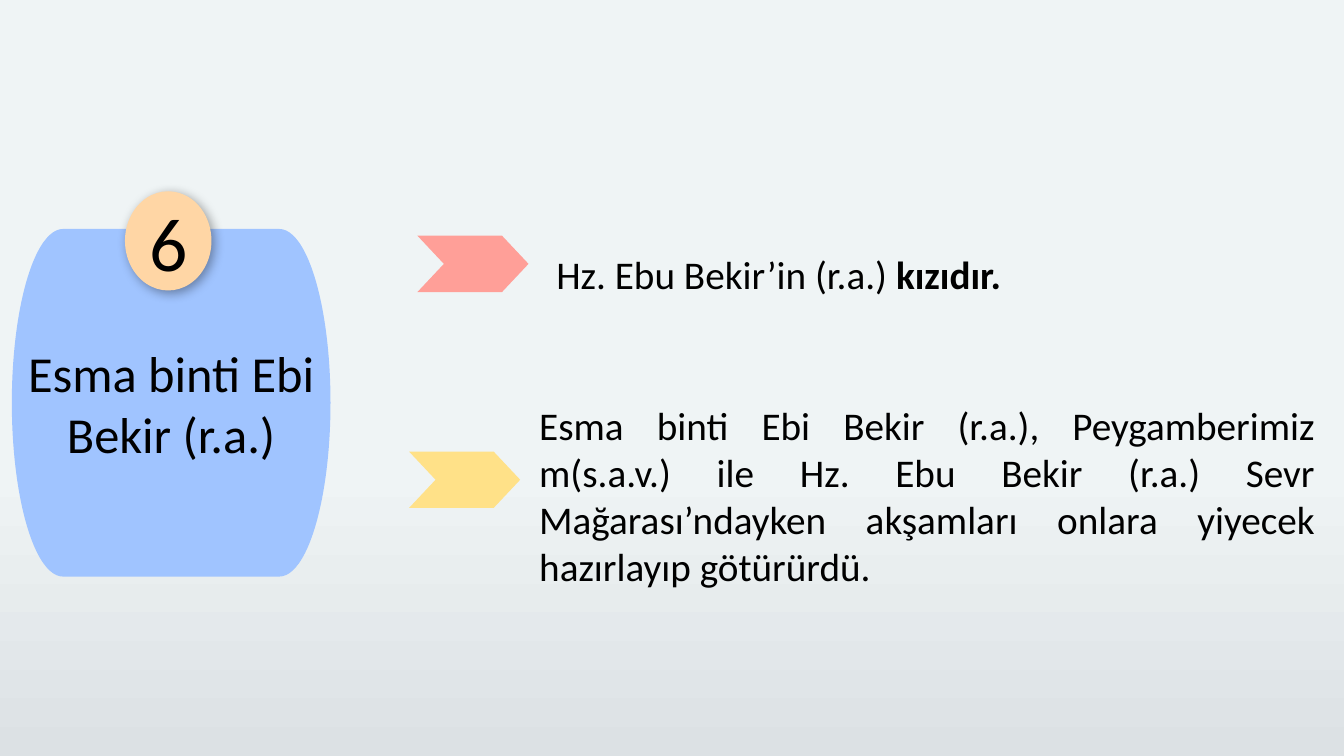
import pptx
import pptx.util
import pptx.dml.color
import pptx.enum.shapes
import pptx.enum.text
import lxml.etree

Cm = pptx.util.Cm
SHAPES = pptx.enum.shapes.MSO_SHAPE
ALIGN = pptx.enum.text.PP_ALIGN
ANCHOR = pptx.enum.text.MSO_ANCHOR

COLORS = {
    "sky": "EFF4F5",
    "ground": "DCE1E4",
    "name": "A0C4FF",
    "badge": "FFD6A5",
    "coral": "FF9F98",
    "yellow": "FFE188",
    "text": "000000",
}


def add_filled_shape(kind, left, top, width, height, color):
    shape = slide.shapes.add_shape(kind, Cm(left), Cm(top), Cm(width), Cm(height))
    shape.shadow.inherit = False
    shape.line.fill.background()
    shape.fill.solid()
    shape.fill.fore_color.rgb = pptx.dml.color.RGBColor.from_string(COLORS[color])
    return shape


def write_runs(shape, runs, size, alignment):
    shape.text_frame.word_wrap = True
    paragraph = shape.text_frame.paragraphs[0]
    paragraph.alignment = alignment
    for text, bold in runs:
        run = paragraph.add_run()
        run.text = text
        run.font.name = "Calibri"
        run.font.size = pptx.util.Pt(size)
        run.font.bold = bold
        run.font.color.rgb = pptx.dml.color.RGBColor.from_string(COLORS["text"])
    return paragraph


presentation = pptx.Presentation()
presentation.slide_width = Cm(33.87)
presentation.slide_height = Cm(19.05)
slide = presentation.slides.add_slide(presentation.slide_layouts[6])

# Background: light, darkening towards the bottom
background = add_filled_shape(SHAPES.RECTANGLE, 0, 0, 33.87, 19.05, "sky")
background.fill.gradient()
background.fill.gradient_angle = 270
for stop, (position, color) in zip(background.fill.gradient_stops,
                                   [(0.62, "sky"), (1, "ground")]):
    stop.position = position
    stop.color.rgb = pptx.dml.color.RGBColor.from_string(COLORS[color])

# Name panel
panel = add_filled_shape(SHAPES.FLOWCHART_TERMINATOR, 0.3, 5.77, 8.03, 8.76, "name")
frame = panel.text_frame
frame.margin_left = frame.margin_right = frame.margin_top = frame.margin_bottom = 0
frame.vertical_anchor = ANCHOR.MIDDLE
write_runs(panel, [("Esma binti Ebi Bekir (r.a.)", False)], 36, ALIGN.CENTER)

# Number badge with a soft shadow
badge = add_filled_shape(SHAPES.OVAL, 3.15, 4.82, 2.18, 2.5, "badge")
badge.text_frame.vertical_anchor = ANCHOR.MIDDLE
write_runs(badge, [("6", False)], 54, ALIGN.CENTER)
effects = badge.element.spPr.find(pptx.oxml.ns.qn("a:effectLst"))
shadow = lxml.etree.SubElement(
    effects, pptx.oxml.ns.qn("a:outerShdw"),
    blurRad=str(pptx.util.Pt(8)), dist=str(pptx.util.Pt(3)),
    dir=str(45 * 60000), algn="tl", rotWithShape="0")
shadow_color = lxml.etree.SubElement(shadow, pptx.oxml.ns.qn("a:srgbClr"), val=COLORS["text"])
lxml.etree.SubElement(shadow_color, pptx.oxml.ns.qn("a:alpha"), val="34000")

# Arrow markers
for left, top, color in [(10.52, 5.94, "coral"), (10.31, 11.38, "yellow")]:
    marker = add_filled_shape(SHAPES.CHEVRON, left, top, 2.8, 1.42, color)
    marker.adjustments[0] = 0.47

# Facts
facts = [
    (13.77, 5.59, 19.63, 2.06, 1.5, ALIGN.LEFT,
     [("Hz. Ebu Bekir’in (r.a.) ", False), ("kızıdır.", True)]),
    (13.34, 9.98, 20.04, 5.05, 1.0, ALIGN.JUSTIFY,
     [("Esma binti Ebi Bekir (r.a.), Peygamberimiz m(s.a.v.) ile Hz. Ebu Bekir (r.a.) "
       "Sevr Mağarası’ndayken akşamları onlara yiyecek hazırlayıp götürürdü.", False)]),
]
for left, top, width, height, spacing, alignment, runs in facts:
    fact = slide.shapes.add_textbox(Cm(left), Cm(top), Cm(width), Cm(height))
    paragraph = write_runs(fact, runs, 28, alignment)
    paragraph.line_spacing = spacing
    fact.text_frame.auto_size = pptx.enum.text.MSO_AUTO_SIZE.SHAPE_TO_FIT_TEXT

presentation.save("out.pptx")
